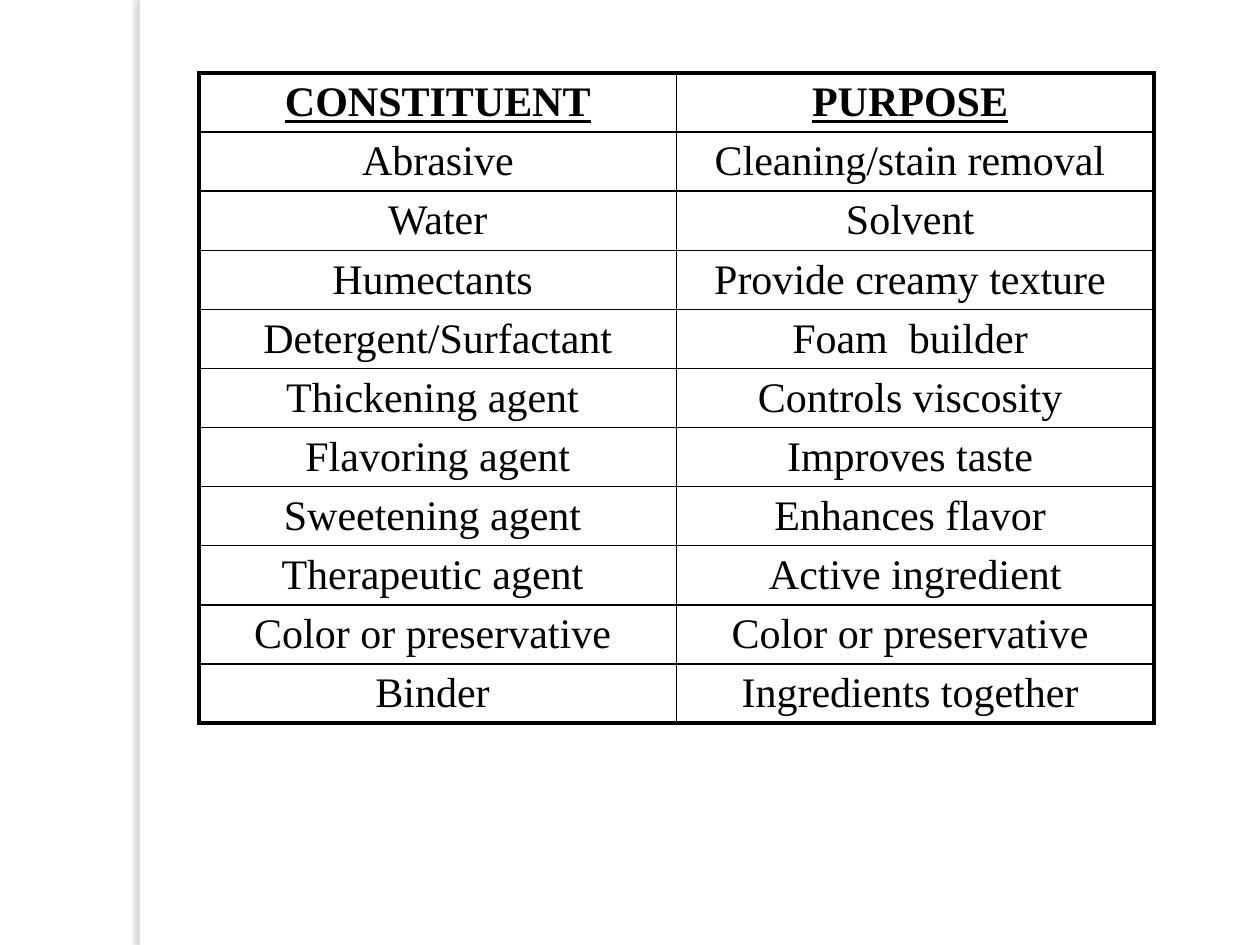
from dataclasses import dataclass

from lxml import etree
from pptx import Presentation
from pptx.dml.color import RGBColor
from pptx.enum.shapes import MSO_SHAPE
from pptx.enum.text import PP_ALIGN
from pptx.oxml.ns import qn
from pptx.util import Inches, Pt

RECTANGLE = MSO_SHAPE.RECTANGLE
CENTER = PP_ALIGN.CENTER

BLACK = RGBColor(0x00, 0x00, 0x00)
WHITE = RGBColor(0xFF, 0xFF, 0xFF)
SHADOW_GREY = RGBColor(0x73, 0x6F, 0x63)

FONT = "Times New Roman"
TEXT_SIZE = Pt(24)
OUTER_LINE = Pt(2.25)
INNER_LINE = Pt(1)

SLIDE_WIDTH = Inches(10)
SLIDE_HEIGHT = Inches(7.5)
COLUMN_WIDTH = Inches(3.79)
ROW_HEIGHT = Inches(0.4)


@dataclass(frozen=True)
class Ingredient:
    constituent: str
    purpose: str


HEADINGS = ("CONSTITUENT", "PURPOSE")
INGREDIENTS = [
    Ingredient("Abrasive", "Cleaning/stain removal "),
    Ingredient("Water", "Solvent "),
    Ingredient("Humectants ", "Provide creamy texture "),
    Ingredient("Detergent/Surfactant", "Foam  builder "),
    Ingredient("Thickening agent ", "Controls viscosity "),
    Ingredient("Flavoring agent", "Improves taste "),
    Ingredient("Sweetening agent ", "Enhances flavor "),
    Ingredient("Therapeutic agent ", "Active ingredient"),
    Ingredient("Color or preservative ", "Color or preservative "),
    Ingredient("Binder ", "Ingredients together "),
]


def add_color(parent, color: RGBColor):
    return etree.SubElement(parent, qn("a:srgbClr"), val=str(color))


def draw_side_strip(slide) -> None:
    strip = slide.shapes.add_shape(
        RECTANGLE, Inches(1.11), 0, Inches(0.08), SLIDE_HEIGHT
    )
    strip.fill.solid()
    strip.fill.fore_color.rgb = WHITE
    strip.line.fill.background()
    effects = etree.SubElement(strip._element.spPr, qn("a:effectLst"))
    shadow = etree.SubElement(
        effects, qn("a:outerShdw"),
        blurRad=str(Pt(3)), dist=str(Pt(3)), dir=str(180 * 60000),
        algn="tl", rotWithShape="0",
    )
    etree.SubElement(
        add_color(shadow, SHADOW_GREY), qn("a:alpha"), val="25000"
    )


def set_borders(cell, outer_sides: dict[str, bool]) -> None:
    properties = cell._tc.get_or_add_tcPr()
    for side, is_outer in outer_sides.items():
        width = OUTER_LINE if is_outer else INNER_LINE
        border = etree.SubElement(properties, qn(f"a:ln{side}"), w=str(width))
        add_color(etree.SubElement(border, qn("a:solidFill")), BLACK)


def write_cell(cell, text: str, heading: bool) -> None:
    paragraph = cell.text_frame.paragraphs[0]
    paragraph.alignment = CENTER
    run = paragraph.add_run()
    run.text = text
    run.font.underline = heading
    font = paragraph.font
    for target in (font, run.font):
        target.name = FONT
        target.size = TEXT_SIZE
        target.bold = heading
        target.color.rgb = BLACK


def draw_ingredient_table(slide) -> None:
    rows = [HEADINGS] + [(i.constituent, i.purpose) for i in INGREDIENTS]
    last_row, last_column = len(rows) - 1, len(HEADINGS) - 1
    table = slide.shapes.add_table(
        len(rows), len(HEADINGS), Inches(1.58), Inches(0.58),
        COLUMN_WIDTH * len(HEADINGS), ROW_HEIGHT * len(rows),
    ).table
    table.first_row = False
    table.horz_banding = False
    for r, texts in enumerate(rows):
        for c, text in enumerate(texts):
            cell = table.cell(r, c)
            write_cell(cell, text, heading=r == 0)
            set_borders(cell, {
                "L": c == 0, "R": c == last_column,
                "T": r == 0, "B": r == last_row,
            })
            cell.fill.background()
    purpose_tail = table.cell(0, last_column).text_frame.paragraphs[0].add_run()
    purpose_tail.text = " "
    purpose_tail.font.name = FONT
    purpose_tail.font.size = TEXT_SIZE


def main() -> None:
    presentation = Presentation()
    presentation.slide_width = SLIDE_WIDTH
    presentation.slide_height = SLIDE_HEIGHT
    slide = presentation.slides.add_slide(presentation.slide_layouts[6])
    slide.background.fill.solid()
    slide.background.fill.fore_color.rgb = WHITE
    draw_side_strip(slide)
    draw_ingredient_table(slide)
    presentation.save("out.pptx")


if __name__ == "__main__":
    main()
